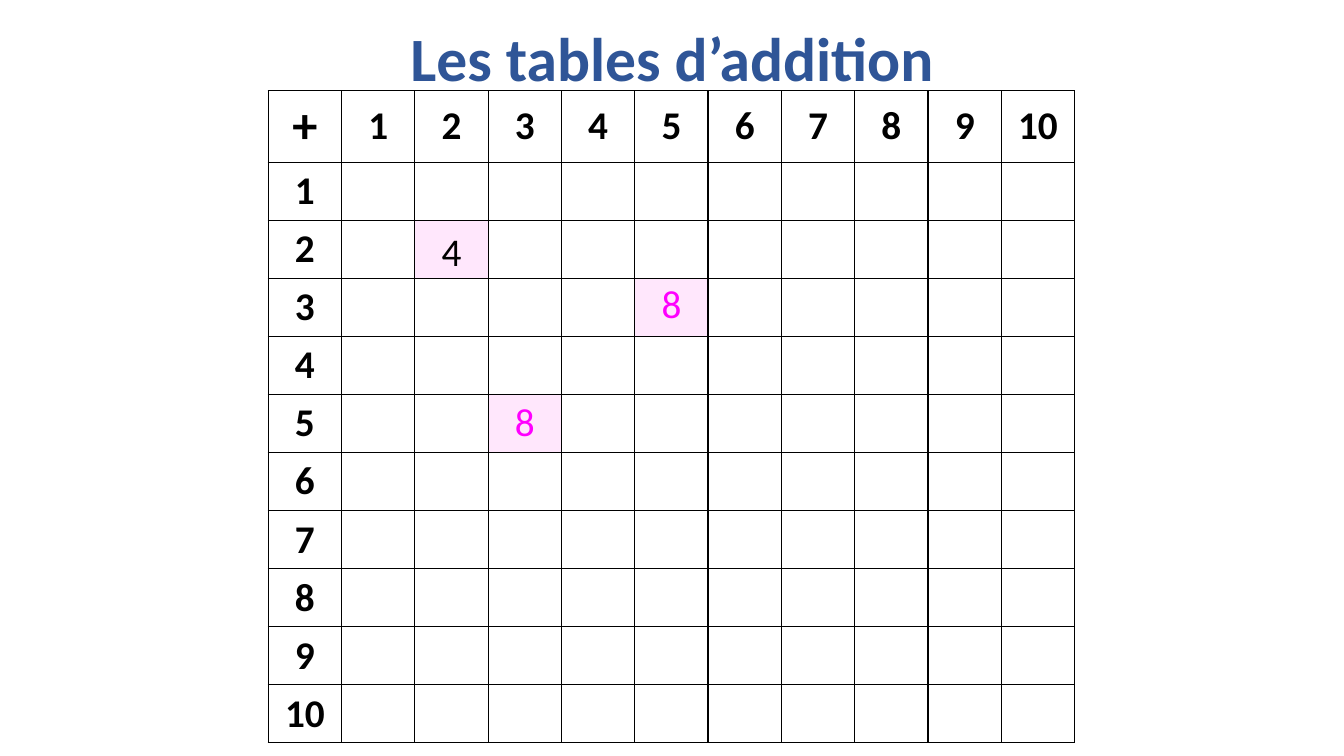
from dataclasses import dataclass

from lxml import etree
from pptx import Presentation
from pptx.dml.color import RGBColor
from pptx.enum.text import MSO_ANCHOR, PP_ALIGN
from pptx.oxml.ns import qn
from pptx.util import Inches, Pt

CENTER = PP_ALIGN.CENTER
MIDDLE = MSO_ANCHOR.MIDDLE
TITLE_ONLY = 5


@dataclass(frozen=True)
class Theme:
    font: str = "Calibri"
    title: str = "2F5597"
    ink: str = "000000"
    paper: str = "FFFFFF"
    highlight: str = "FFE7FC"
    accent: str = "FF00FF"
    title_size: int = 44
    sign_size: int = 36
    number_size: int = 28
    border_width: int = 1


THEME = Theme()
NUMBERS = range(1, 11)
TITLE_BOX = (0.92, -0.11, 11.5, 1.45)
GRID_BOX = (2.66, 0.9, 8, 6.4)
HEADER_HEIGHT = 0.7
ROW_HEIGHT = 0.57
SUM_WIDTH = 0.71

# (row number, column number, vertical offset within the cell)
DOUBLE = (2, 2, 0.04)
COMMUTED_PAIR = [(5, 3, 0.01), (3, 5, -0.02)]


def write(frame, text, size=THEME.number_size, color=THEME.ink, bold=False,
          spacing=None):
    paragraph = frame.paragraphs[0]
    paragraph.alignment = CENTER
    if spacing:
        paragraph.line_spacing = spacing
    run = paragraph.add_run()
    run.text = text
    run.font.name = THEME.font
    run.font.size = Pt(size)
    run.font.bold = bold
    run.font.color.rgb = RGBColor.from_string(color)


def add_title(slide, box):
    title = slide.shapes.title
    title.left, title.top, title.width, title.height = map(Inches, box)
    title.text_frame.vertical_anchor = MIDDLE
    write(title.text_frame, "Les tables d’addition", size=THEME.title_size,
          color=THEME.title, bold=True, spacing=0.9)


def set_borders(cell):
    properties = cell._tc.get_or_add_tcPr()
    for position, side in enumerate(("a:lnL", "a:lnR", "a:lnT", "a:lnB")):
        line = etree.Element(qn(side), w=str(Pt(THEME.border_width)))
        fill = etree.SubElement(line, qn("a:solidFill"))
        etree.SubElement(fill, qn("a:srgbClr"), val=THEME.ink)
        properties.insert(position, line)


def add_grid(slide, box):
    left, top, width, height = map(Inches, box)
    count = len(NUMBERS) + 1
    table = slide.shapes.add_table(count, count, left, top, width, height).table
    table.first_row = table.horz_banding = False
    for column in table.columns:
        column.width = int(width / count)
    for index, row in enumerate(table.rows):
        row.height = Inches(ROW_HEIGHT if index else HEADER_HEIGHT)

    highlighted = {(row, column) for row, column, _ in [DOUBLE, *COMMUTED_PAIR]}
    for row in range(count):
        for column in range(count):
            cell = table.cell(row, column)
            if row and column and (row, column) not in highlighted:
                cell.fill.background()
            else:
                cell.fill.solid()
                cell.fill.fore_color.rgb = RGBColor.from_string(
                    THEME.highlight if row and column else THEME.paper)
            set_borders(cell)
            if row == 0 or column == 0:
                cell.vertical_anchor = MIDDLE
                number = row + column
                write(cell.text_frame, str(number) if number else "+", bold=True,
                      size=THEME.number_size if number else THEME.sign_size)


def add_sum(shapes, box, row, column, offset, color):
    """Write row + column over its cell of the grid that fills box."""
    left, top, width, _ = box
    column_width = width / (len(NUMBERS) + 1)
    x = left + column * column_width + (column_width - SUM_WIDTH) / 2
    y = top + HEADER_HEIGHT + (row - 1) * ROW_HEIGHT + offset
    answer = shapes.add_textbox(Inches(x), Inches(y), Inches(SUM_WIDTH),
                                Inches(ROW_HEIGHT))
    answer.text_frame.word_wrap = True
    write(answer.text_frame, str(row + column), color=color)


def build_addition_slide(presentation):
    slide = presentation.slides.add_slide(presentation.slide_layouts[TITLE_ONLY])
    add_title(slide, TITLE_BOX)
    add_grid(slide, GRID_BOX)
    add_sum(slide.shapes, GRID_BOX, *DOUBLE, color=THEME.ink)
    pair = slide.shapes.add_group_shape()
    for place in COMMUTED_PAIR:
        add_sum(pair.shapes, GRID_BOX, *place, color=THEME.accent)


def main():
    presentation = Presentation()
    presentation.slide_width = Inches(13.33)
    presentation.slide_height = Inches(7.5)
    build_addition_slide(presentation)
    presentation.save("out.pptx")


if __name__ == "__main__":
    main()
